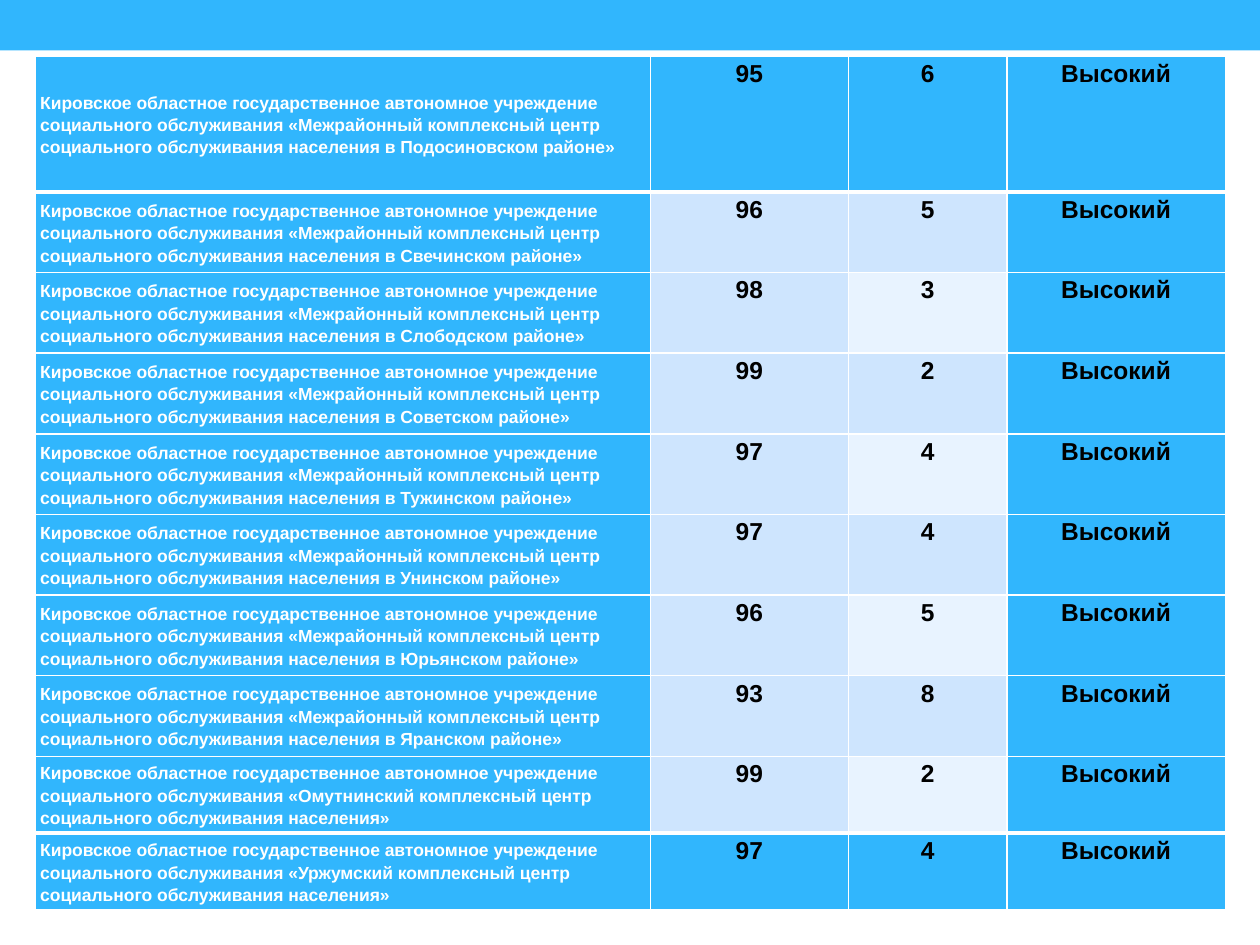
from lxml import etree
from pptx import Presentation
from pptx.dml.color import RGBColor
from pptx.enum.shapes import MSO_SHAPE
from pptx.enum.text import MSO_ANCHOR, PP_ALIGN
from pptx.oxml.ns import qn
from pptx.util import Cm, Pt

RECTANGLE = MSO_SHAPE.RECTANGLE
TOP, MIDDLE = MSO_ANCHOR.TOP, MSO_ANCHOR.MIDDLE
LEFT, CENTER = PP_ALIGN.LEFT, PP_ALIGN.CENTER

BLUE = RGBColor(0x31, 0xB6, 0xFD)
PALE = RGBColor(0xCE, 0xE5, 0xFE)
PALEST = RGBColor(0xE8, 0xF3, 0xFF)
WHITE = RGBColor(0xFF, 0xFF, 0xFF)
BLACK = RGBColor(0, 0, 0)

INSTITUTION = ("Кировское областное государственное автономное учреждение "
               "социального обслуживания «{} комплексный центр "
               "социального обслуживания населения{}»")
LEVEL = "Высокий"
RATINGS = [
    ("Межрайонный", " в Подосиновском районе", 95, 6),
    ("Межрайонный", " в Свечинском районе", 96, 5),
    ("Межрайонный", " в Слободском районе", 98, 3),
    ("Межрайонный", " в Советском районе", 99, 2),
    ("Межрайонный", " в Тужинском районе", 97, 4),
    ("Межрайонный", " в Унинском районе", 97, 4),
    ("Межрайонный", " в Юрьянском районе", 96, 5),
    ("Межрайонный", " в Яранском районе", 93, 8),
    ("Омутнинский", "", 99, 2),
    ("Уржумский", "", 97, 4),
]
COLUMN_WIDTHS = [12.4, 3.99, 3.2, 4.4]
ROW_HEIGHTS = [2.74] + [1.625] * 7 + [1.55] * 2


class SlideBuilder:
    font = "Arial"

    def __init__(self, presentation):
        self.slide = presentation.slides.add_slide(presentation.slide_layouts[6])

    def band(self, left, top, width, height, color):
        shape = self.slide.shapes.add_shape(
            RECTANGLE, Cm(left), Cm(top), Cm(width), Cm(height))
        shape.shadow.inherit = False
        shape.fill.solid()
        shape.fill.fore_color.rgb = color
        shape.line.fill.background()

    def table(self, left, top, widths, heights):
        table = self.slide.shapes.add_table(
            len(heights), len(widths), Cm(left), Cm(top),
            Cm(sum(widths)), Cm(sum(heights))).table
        for column, width in zip(table.columns, widths):
            column.width = Cm(width)
        for row, height in zip(table.rows, heights):
            row.height = Cm(height)
        return table

    def cell(self, cell, text, size, color, fill, align, anchor, space_after):
        cell.margin_left = cell.margin_right = Cm(0.1)
        cell.margin_top = cell.margin_bottom = 0
        cell.vertical_anchor = anchor
        cell.fill.solid()
        cell.fill.fore_color.rgb = fill
        paragraph = cell.text_frame.paragraphs[0]
        paragraph.alignment = align
        paragraph.line_spacing = 1.15
        paragraph.space_after = Pt(space_after)
        run = paragraph.add_run()
        run.text = text
        run.font.name = self.font
        run.font.size = Pt(size)
        run.font.bold = True
        run.font.color.rgb = color

    def borders(self, cell, top, bottom):
        properties = cell._tc.get_or_add_tcPr()
        sides = [("a:lnL", 1), ("a:lnR", 1), ("a:lnT", top), ("a:lnB", bottom)]
        for position, (tag, width) in enumerate(sides):
            line = etree.Element(qn(tag), w=str(Pt(width)))
            fill = etree.SubElement(line, qn("a:solidFill"))
            etree.SubElement(fill, qn("a:srgbClr"), val=str(WHITE))
            properties.insert(position, line)


def main():
    presentation = Presentation()
    presentation.slide_width = Cm(25.4)
    presentation.slide_height = Cm(19.05)
    builder = SlideBuilder(presentation)
    builder.band(0, 0, 25.4, 1.02, BLUE)
    table = builder.table(0.71, 1.13, COLUMN_WIDTHS, ROW_HEIGHTS)

    last = len(RATINGS) - 1
    for index, (center, district, score, place) in enumerate(RATINGS):
        if index in (0, last):
            score_fill = place_fill = BLUE
        else:
            score_fill = PALE
            place_fill = PALE if index % 2 else PALEST
        name = INSTITUTION.format(center, district)
        cells = table.rows[index].cells
        builder.cell(cells[0], name, 10, WHITE, BLUE, LEFT, MIDDLE, 10)
        builder.cell(cells[1], str(score), 14, BLACK, score_fill, CENTER, TOP, 10)
        builder.cell(cells[2], str(place), 14, BLACK, place_fill, CENTER, TOP, 0)
        builder.cell(cells[3], LEVEL, 14, BLACK, BLUE, CENTER, TOP, 0)
        for cell in cells:
            builder.borders(cell, 3 if index in (1, last) else 1,
                            3 if index in (0, last - 1) else 1)

    presentation.save("out.pptx")


if __name__ == "__main__":
    main()
